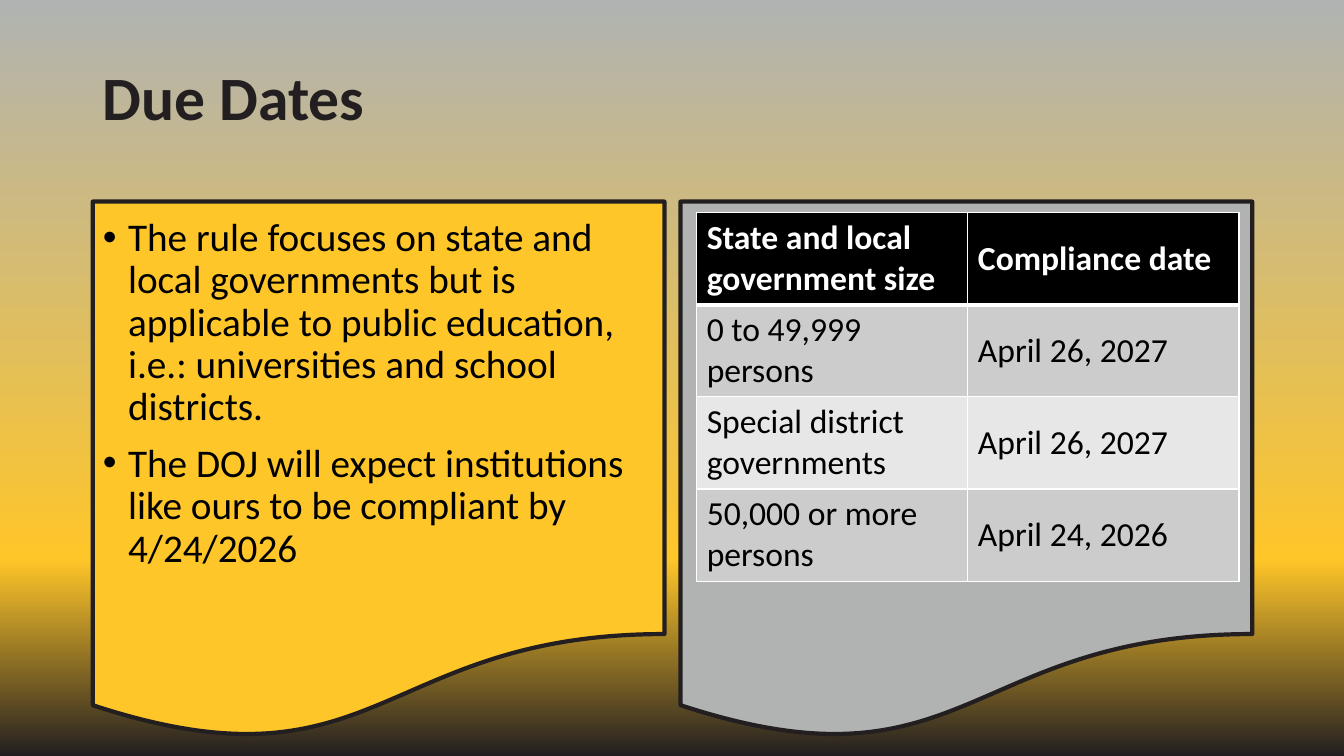
from copy import deepcopy

from lxml.etree import SubElement
from pptx import Presentation
from pptx.dml.color import RGBColor
from pptx.enum.shapes import MSO_SHAPE as Preset
from pptx.enum.text import MSO_ANCHOR as Anchor, MSO_AUTO_SIZE as AutoSize, PP_ALIGN as Align
from pptx.oxml.ns import qn
from pptx.util import Inches, Pt

TITLE = "Due Dates"
BULLETS = [
    "The rule focuses on state and local governments but is applicable to "
    "public education, i.e.: universities and school districts.",
    "The DOJ will expect institutions like ours to be compliant by 4/24/2026",
]
DEADLINES = [
    ("State and local government size", "Compliance date"),
    ("0 to 49,999 persons", "April 26, 2027"),
    ("Special district governments", "April 26, 2027"),
    ("50,000 or more persons", "April 24, 2026"),
]

FONT = "Calibri"
GRAY = RGBColor(0xB0, 0xB3, 0xB2)
GOLD = RGBColor(0xFF, 0xC6, 0x29)
INK = RGBColor(0x23, 0x1F, 0x20)
BLACK = RGBColor(0, 0, 0)
WHITE = RGBColor(0xFF, 0xFF, 0xFF)
BANDS = [RGBColor(0xE7, 0xE7, 0xE7), RGBColor(0xCC, 0xCC, 0xCC)]
BACKGROUND_STOPS = [(0, GRAY), (74, GOLD), (100, INK)]

WIDTH, HEIGHT = Inches(13.33), Inches(7.5)
MARGIN, GAP = Inches(0.92), Inches(0.16)
CONTENT_WIDTH = Inches(11.5)
PANEL_WIDTH = (CONTENT_WIDTH - GAP) // 2
PANEL_TOP, PANEL_HEIGHT = Inches(2), Inches(5.35)
RIGHT_LEFT = MARGIN + PANEL_WIDTH + GAP
BODY_TOP = PANEL_TOP + Inches(0.11)
COLUMN_WIDTH, ROW_HEIGHT = Inches(2.69), Inches(0.9)


def place(shape, left, top, width, height):
    shape.left, shape.top, shape.width, shape.height = left, top, width, height


def add_text(paragraph, text, size, color, bold=False):
    run = paragraph.add_run()
    run.text = text
    run.font.name, run.font.size, run.font.bold = FONT, Pt(size), bold
    run.font.color.rgb = color


def paint_background(slide):
    fill = slide.background.fill
    fill.gradient()
    fill.gradient_angle = 270
    stop_list = slide.element.find(".//" + qn("a:gsLst"))
    stop_list.append(deepcopy(stop_list[-1]))
    for stop, (percent, color) in zip(fill.gradient_stops, BACKGROUND_STOPS):
        stop.position = percent / 100
        stop.color.rgb = color


def add_panel(slide, left, color):
    panel = slide.shapes.add_shape(
        Preset.FLOWCHART_DOCUMENT, left, PANEL_TOP, PANEL_WIDTH, PANEL_HEIGHT)
    panel.shadow.inherit = False
    panel.fill.solid()
    panel.fill.fore_color.rgb = color
    panel.line.color.rgb = INK
    panel.line.width = Pt(3)
    slide.shapes.element.insert(2, panel.element)


def set_borders(cell, widths):
    properties = cell._tc.get_or_add_tcPr()
    for index, (side, width) in enumerate(widths.items()):
        line = SubElement(properties, qn("a:ln" + side), w=str(Pt(width)))
        color = SubElement(SubElement(line, qn("a:solidFill")), qn("a:srgbClr"))
        color.set("val", str(WHITE))
        properties.insert(index, line)


def add_deadlines(slide):
    rows, columns = len(DEADLINES), len(DEADLINES[0])
    table = slide.shapes.add_table(
        rows, columns, RIGHT_LEFT + GAP, BODY_TOP,
        columns * COLUMN_WIDTH, rows * ROW_HEIGHT).table
    for row, values in enumerate(DEADLINES):
        header = row == 0
        for column, value in enumerate(values):
            cell = table.cell(row, column)
            cell.vertical_anchor = Anchor.MIDDLE
            cell.fill.solid()
            cell.fill.fore_color.rgb = BLACK if header else BANDS[row % 2]
            add_text(cell.text_frame.paragraphs[0], value, 24,
                     WHITE if header else BLACK, header)
            set_borders(cell, {"L": 1, "R": 1, "T": 3 if row == 1 else 1,
                               "B": 3 if header else 1})


def main():
    presentation = Presentation()
    presentation.slide_width, presentation.slide_height = WIDTH, HEIGHT
    slide = presentation.slides.add_slide(presentation.slide_layouts[1])
    paint_background(slide)
    add_panel(slide, MARGIN, GOLD)
    add_panel(slide, RIGHT_LEFT, GRAY)

    title, body = slide.placeholders
    place(title, MARGIN, Inches(0.27), CONTENT_WIDTH, Inches(1.45))
    place(body, MARGIN, BODY_TOP, PANEL_WIDTH, Inches(4.64))
    for placeholder in (title, body):
        placeholder.text_frame.auto_size = AutoSize.NONE

    title.text_frame.vertical_anchor = Anchor.MIDDLE
    heading = title.text_frame.paragraphs[0]
    heading.alignment = Align.LEFT
    heading.line_spacing = 0.9
    add_text(heading, TITLE, 44, INK, True)

    for index, bullet in enumerate(BULLETS):
        frame = body.text_frame
        paragraph = frame.add_paragraph() if index else frame.paragraphs[0]
        paragraph.line_spacing = 0.9
        paragraph.space_before = Pt(10)
        properties = paragraph._p.get_or_add_pPr()
        properties.set("marL", str(Inches(0.25)))
        properties.set("indent", str(-Inches(0.25)))
        add_text(paragraph, bullet, 28, BLACK)

    add_deadlines(slide)
    presentation.save("out.pptx")


if __name__ == "__main__":
    main()
